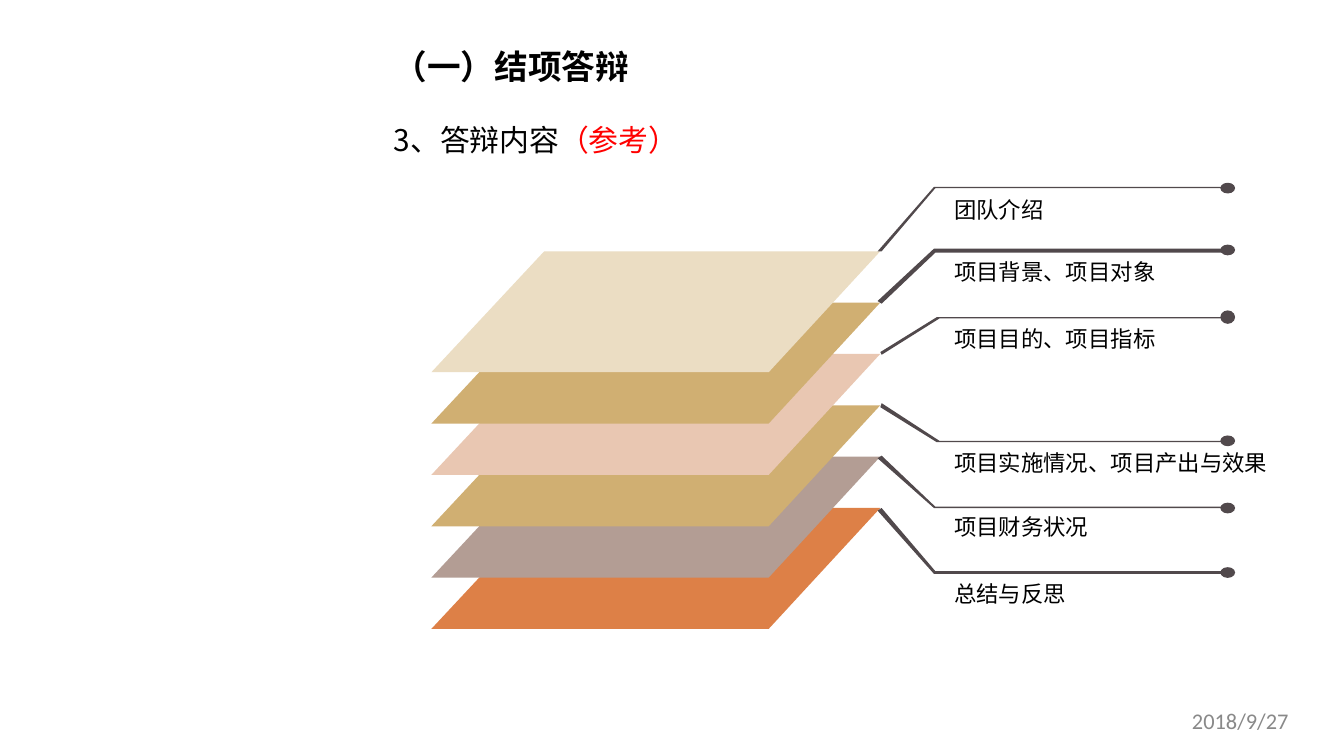
from pptx import Presentation
from pptx.dml.color import RGBColor
from pptx.enum.shapes import MSO_SHAPE
from pptx.enum.text import MSO_ANCHOR, MSO_AUTO_SIZE, PP_ALIGN
from pptx.oxml.ns import qn
from pptx.util import Inches, Pt
from lxml import etree

OVAL = MSO_SHAPE.OVAL
TOP, MIDDLE = MSO_ANCHOR.TOP, MSO_ANCHOR.MIDDLE
LEFT = PP_ALIGN.LEFT
NO_FIT = MSO_AUTO_SIZE.NONE

SLIDE_WIDTH = 10
SLIDE_HEIGHT = SLIDE_WIDTH * 9 / 16

CJK, LATIN = "Noto Sans CJK SC", "Calibri"
BLACK, RED, GREY, LEADER = "000000", "FF0000", "898989", "51494C"

HEADING = [
    [("（一）结项答辩", 18, True, BLACK)],
    [("3、答辩内容", 16, False, BLACK), ("（参考）", 16, False, RED)],
]
DATE = "2018/9/27"

LAYER_COLOURS = ["EBDDC3", "D0AF72", "E9C7B2", "D0AF72", "B39D94", "DD8047"]
LAYER_TOP, LAYER_STEP, LAYER_HEIGHT = 1.87, 1.91 / 5, 0.9

OUTER_XS = (6.53, 6.56, 6.95, 6.96, 9.17)
MIDDLE_XS = (6.55, 6.56, 6.97, 6.99, 9.16)

# label, label top, label width, dot top, dot height, leader xs, leader ys
TOPICS = [
    ("团队介绍", 1.41, 2.08, 1.36, 0.08, OUTER_XS, (1.87, 1.87, 1.39, 1.4)),
    ("项目背景、项目对象", 1.87, 2.08, 1.82, 0.08, OUTER_XS, (2.24, 2.26, 1.85, 1.88)),
    ("项目目的、项目指标", 2.37, 2.08, 2.31, 0.1, MIDDLE_XS, (2.62, 2.64, 2.36, 2.37)),
    ("项目实施情况、项目产出与效果", 3.29, 2.62, 3.24, 0.08, MIDDLE_XS, (3.03, 3, 3.29, 3.28)),
    ("项目财务状况", 3.77, 2.08, 3.74, 0.08, OUTER_XS, (3.41, 3.39, 3.78, 3.77)),
    ("总结与反思", 4.27, 2.08, 4.22, 0.08, OUTER_XS, (3.8, 3.78, 4.27, 4.25)),
]


def rgb(value):
    return RGBColor.from_string(value)


def paint(shape, colour):
    shape.fill.solid()
    shape.fill.fore_color.rgb = rgb(colour)
    shape.line.fill.background()
    shape.shadow.inherit = False


def add_polygon(slide, corners, colour):
    start, *rest = [(Inches(x), Inches(y)) for x, y in corners]
    builder = slide.shapes.build_freeform(*start)
    builder.add_line_segments(rest, close=True)
    paint(builder.convert_to_shape(), colour)


def add_run(paragraph, text, size, bold, colour, font):
    run = paragraph.add_run()
    run.text = text
    run.font.size = Pt(size)
    run.font.bold = bold
    run.font.color.rgb = rgb(colour)
    run.font.name = font
    east_asian = etree.SubElement(run.font._element, qn("a:ea"))
    east_asian.set("typeface", font)


def add_label(slide, text, box, colour, font, anchor):
    frame = slide.shapes.add_textbox(*map(Inches, box)).text_frame
    frame.word_wrap = True
    frame.vertical_anchor = anchor
    add_run(frame.paragraphs[0], text, 12, False, colour, font)


def add_heading(slide):
    title = slide.shapes.title
    title.left, title.top, title.width, title.height = map(Inches, (2.83, -0.01, 2.76, 1.24))
    frame = title.text_frame
    frame.word_wrap = True
    frame.auto_size = NO_FIT
    frame.vertical_anchor = TOP
    for index, runs in enumerate(HEADING):
        paragraph = frame.add_paragraph() if index else frame.paragraphs[0]
        paragraph.alignment = LEFT
        paragraph.line_spacing = 2.0
        for text, size, bold, colour in runs:
            add_run(paragraph, text, size, bold, colour, CJK)


def add_layers(slide):
    for index in reversed(range(len(LAYER_COLOURS))):
        top = LAYER_TOP + index * LAYER_STEP
        bottom = top + LAYER_HEIGHT
        corners = [(5.72, bottom), (3.21, bottom), (4.05, top), (6.55, top)]
        add_polygon(slide, corners, LAYER_COLOURS[index])


def add_topics(slide):
    for label, label_top, width, dot_top, dot_height, xs, ys in TOPICS:
        outer_tip_x, inner_tip_x, outer_bend, inner_bend, end = xs
        outer_tip, inner_tip, outer_bar, inner_bar = ys
        add_polygon(slide, [
            (inner_tip_x, inner_tip), (outer_tip_x, outer_tip), (outer_bend, outer_bar),
            (end, outer_bar), (end, inner_bar), (inner_bend, inner_bar),
        ], LEADER)
        dot = slide.shapes.add_shape(OVAL, *map(Inches, (9.08, dot_top, 0.11, dot_height)))
        paint(dot, LEADER)
        add_label(slide, label, (7, label_top, width, 0.3), BLACK, CJK, TOP)


def main():
    deck = Presentation()
    deck.slide_width, deck.slide_height = Inches(SLIDE_WIDTH), Inches(SLIDE_HEIGHT)
    slide = deck.slides.add_slide(deck.slide_layouts[5])
    add_heading(slide)
    add_layers(slide)
    add_topics(slide)
    add_label(slide, DATE, (8.77, 5.21, 1.08, 0.3), GREY, LATIN, MIDDLE)
    deck.save("out.pptx")


if __name__ == "__main__":
    main()
